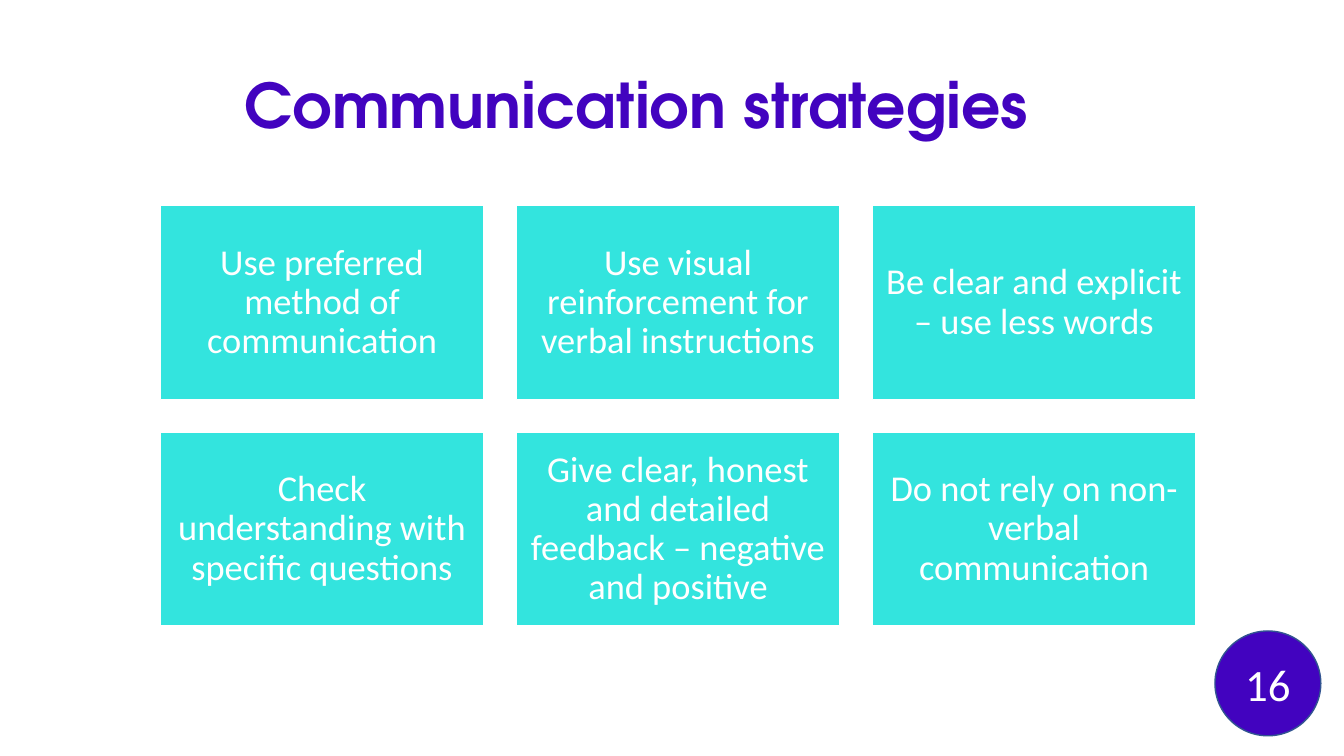
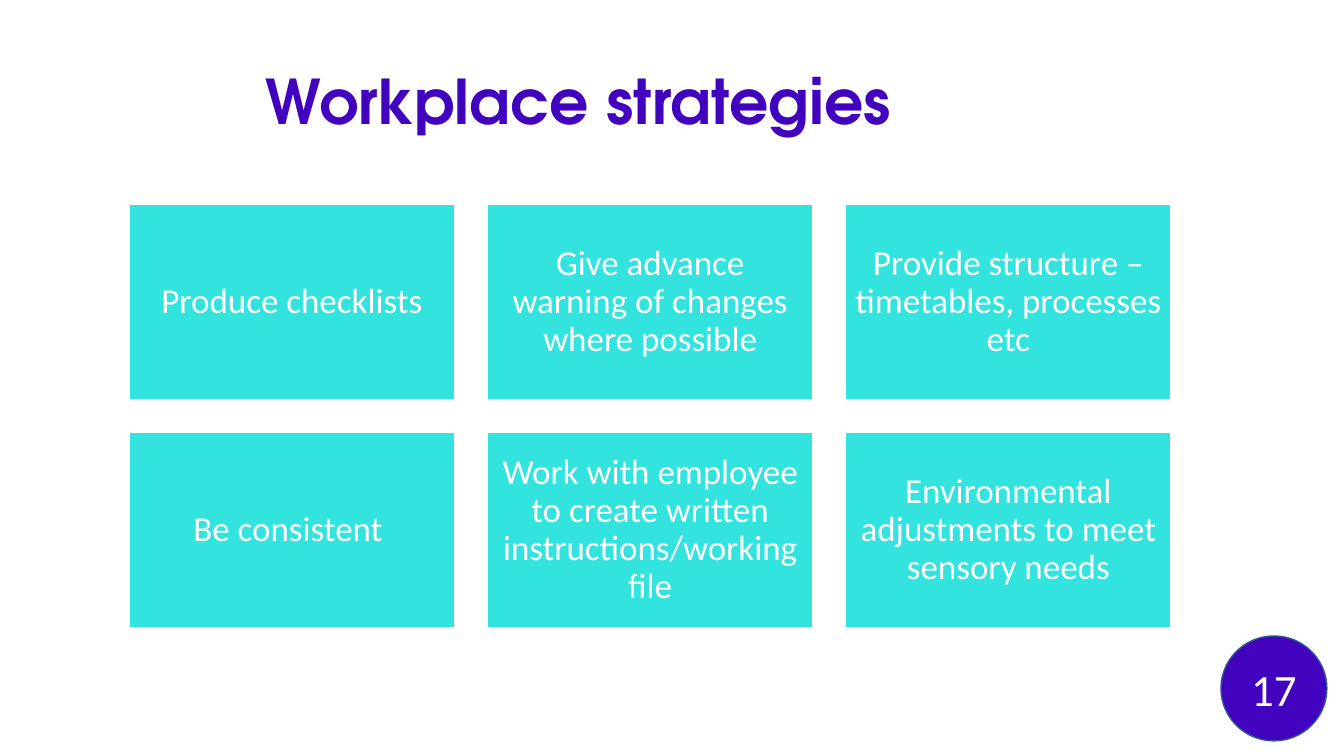
from pptx import Presentation
from pptx.dml.color import RGBColor
from pptx.enum.shapes import MSO_SHAPE
from pptx.enum.text import MSO_ANCHOR, PP_ALIGN
from pptx.util import Inches, Pt

RECT, OVAL = MSO_SHAPE.RECTANGLE, MSO_SHAPE.OVAL
TOP, MIDDLE = MSO_ANCHOR.TOP, MSO_ANCHOR.MIDDLE
CENTER = PP_ALIGN.CENTER

COLORS = {"title": "4203BF", "card": "33E4DE", "white": "FFFFFF", "rim": "325491"}
BODY_FONT, TITLE_FONT = "Calibri", "TeX Gyre Adventor"
COLUMNS = 3
GAP_SHARE, HEIGHT_SHARE = 0.1, 0.6

SLIDES = [
    {
        "title": "Communication strategies", "title_at": (2.07, 0.7, 8.49),
        "grid_at": (1.59, 2.04), "card_width": 3.21, "size": 26, "inset": 0.11,
        "cards": [
            "Use preferred method of communication",
            "Use visual reinforcement for verbal instructions",
            "Be clear and explicit – use less words",
            "Check understanding with specific questions",
            "Give clear, honest and detailed feedback – negative and positive",
            "Do not rely on non-verbal communication",
        ],
        "number": "16", "number_at": (12.05, 6.26),
    },
    {
        "title": "Workplace strategies", "title_at": (2.12, 0.66, 7.24),
        "grid_at": (1.28, 2.03), "card_width": 3.23, "size": 25, "inset": 0.1,
        "cards": [
            "Produce checklists",
            "Give advance warning of changes where possible",
            "Provide structure – timetables, processes etc",
            "Be consistent ",
            "Work with employee to create written instructions/working file",
            "Environmental adjustments to meet sensory needs",
        ],
        "number": "17", "number_at": (12.11, 6.31),
    },
]


def rgb(name):
    """Look up a palette colour."""
    return RGBColor.from_string(COLORS[name])


def set_text(sp, text, size, color="white", font=BODY_FONT, bold=False,
             spacing=0.9, anchor=MIDDLE):
    """Write one centred paragraph into a shape."""
    tf = sp.text_frame
    tf.word_wrap = True
    tf.vertical_anchor = anchor
    p = tf.paragraphs[0]
    p.text = text
    p.alignment = CENTER
    p.line_spacing = spacing
    p.font.name, p.font.size, p.font.bold = font, Pt(size), bold
    p.font.color.rgb = rgb(color)


def add_shape(s, kind, box, fill, line):
    """Add a flat filled shape with a thin outline."""
    sp = s.shapes.add_shape(kind, *map(Inches, box))
    sp.shadow.inherit = False
    sp.fill.solid()
    sp.fill.fore_color.rgb = rgb(fill)
    sp.line.color.rgb = rgb(line)
    sp.line.width = Pt(1)
    return sp


def add_title(s, text, at):
    """Add the slide heading."""
    sp = s.shapes.add_textbox(*map(Inches, (*at, 0.71)))
    set_text(sp, text, 44, "title", TITLE_FONT, bold=True, anchor=TOP)


def add_cards(s, texts, at, width, size, inset):
    """Lay the strategy cards out in rows of three."""
    left, top = at
    height, gap = width * HEIGHT_SHARE, width * GAP_SHARE
    for i, text in enumerate(texts):
        row, col = divmod(i, COLUMNS)
        box = (left + col * (width + gap), top + row * (height + gap), width, height)
        sp = add_shape(s, RECT, box, "card", "white")
        tf = sp.text_frame
        tf.margin_left = tf.margin_right = Inches(inset)
        tf.margin_top = tf.margin_bottom = Inches(inset)
        set_text(sp, text, size)


def add_number(s, number, at):
    """Add the round page number."""
    sp = add_shape(s, OVAL, (*at, 1.05, 1.04), "title", "rim")
    set_text(sp, number, 32, spacing=1.0)


def main():
    """Build and save the presentation."""
    prs = Presentation()
    prs.slide_width, prs.slide_height = Inches(13.33), Inches(7.5)
    for d in SLIDES:
        s = prs.slides.add_slide(prs.slide_layouts[6])
        add_title(s, d["title"], d["title_at"])
        add_cards(s, d["cards"], d["grid_at"], d["card_width"], d["size"], d["inset"])
        add_number(s, d["number"], d["number_at"])
    prs.save("out.pptx")


if __name__ == "__main__":
    main()
